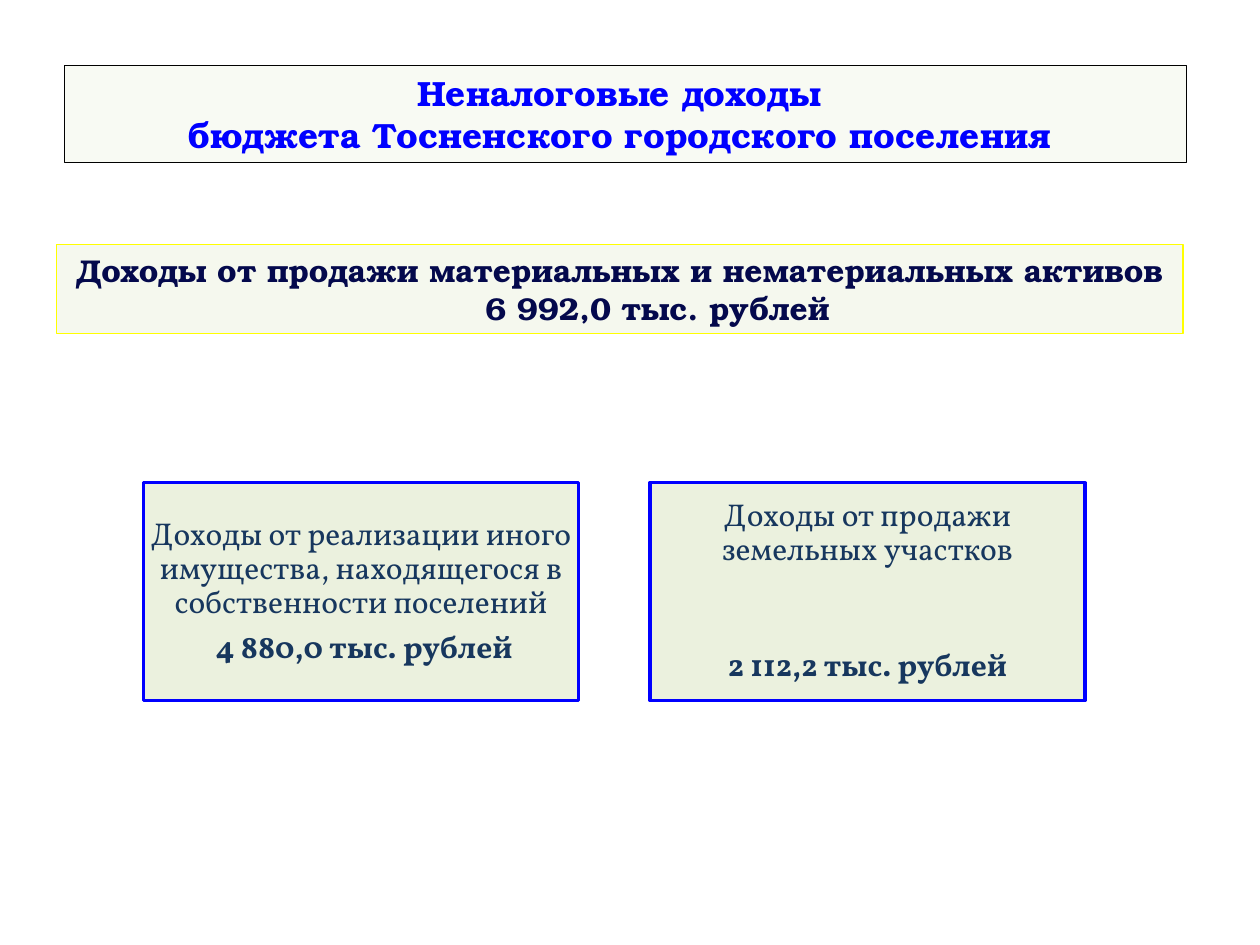
from lxml import etree
from pptx import Presentation
from pptx.dml.color import RGBColor
from pptx.enum.shapes import MSO_SHAPE
from pptx.enum.text import MSO_ANCHOR, PP_ALIGN
from pptx.oxml.ns import qn
from pptx.util import Inches, Pt

RECT = MSO_SHAPE.RECTANGLE
MIDDLE = MSO_ANCHOR.MIDDLE
CENTER = PP_ALIGN.CENTER

BLACK = RGBColor(0x00, 0x00, 0x00)
BLUE = RGBColor(0x00, 0x00, 0xFF)
YELLOW = RGBColor(0xFF, 0xFF, 0x00)
GREEN = RGBColor(0xEB, 0xF1, 0xDE)
NAVY = RGBColor(0x04, 0x09, 0x4C)
STEEL = RGBColor(0x17, 0x37, 0x5E)

HEAD = "TeX Gyre Bonum"
BODY = "Vollkorn"


class Deck:
    """Holds the style and the slide; places are percent of its size."""

    def __init__(self):
        self.prs = Presentation()
        self.prs.slide_width = Inches(10)
        self.prs.slide_height = Inches(7.5)
        self.slide = self.prs.slides.add_slide(self.prs.slide_layouts[6])

    def box(self, left, top, width, height, line, weight, alpha=100):
        wide, high = self.prs.slide_width / 100, self.prs.slide_height / 100
        shape = self.slide.shapes.add_shape(
            RECT, int(left * wide), int(top * high),
            int(width * wide), int(height * high))
        shape.shadow.inherit = False
        shape.fill.solid()
        shape.fill.fore_color.rgb = GREEN
        if alpha < 100:
            color = shape.fill._xPr.find(qn("a:solidFill"))[0]
            etree.SubElement(color, qn("a:alpha")).set("val", str(alpha * 1000))
        shape.line.color.rgb = line
        shape.line.width = Pt(weight)
        frame = shape.text_frame
        frame.word_wrap = True
        frame.vertical_anchor = MIDDLE
        return frame

    def text(self, frame, words, font, size, color, bold=True, indent=0):
        para = frame.paragraphs[0]
        if para.text:
            para = frame.add_paragraph()
        para.text = words
        para.alignment = CENTER
        if indent:
            para._p.get_or_add_pPr().set("marL", str(Inches(indent)))
        para.font.name = font
        para.font.size = Pt(size)
        para.font.bold = bold
        para.font.color.rgb = color
        return para

    def card(self, left, label, amount, gap=0, indent=0):
        frame = self.box(left, 51.07, 34.5, 23.07, BLUE, 2)
        frame.margin_left = frame.margin_right = Inches(0.01)
        frame.margin_top = frame.margin_bottom = Inches(0.01)
        name = self.text(frame, label, BODY, 18, STEEL, bold=False)
        total = self.text(frame, amount, BODY, 18, STEEL, indent=indent)
        for para in (name, total):
            para.line_spacing = 0.9
            para.space_after = Pt(6.3)
        if gap:
            total.space_before = Pt(gap)


def main():
    deck = Deck()

    # Title
    title = deck.box(5.1, 6.93, 89.1, 10.27, BLACK, 0.75, alpha=35)
    title.margin_right = Inches(0.2)
    deck.text(title, "Неналоговые доходы\vбюджета Тосненского городского поселения",
              HEAD, 20, BLUE)

    # Income cards
    deck.card(51.6, "Доходы от продажи земельных участков",
              "2 112,2 тыс. рублей", gap=40.5)
    deck.card(11.4, "Доходы от реализации иного имущества, "
              "находящегося в собственности поселений",
              "4 880,0 тыс. рублей", indent=0.05)

    # Total banner
    total = deck.box(4.5, 25.87, 89.4, 9.47, YELLOW, 0.75, alpha=49)
    deck.text(total, "Доходы от продажи материальных и нематериальных активов",
              HEAD, 18, NAVY)
    deck.text(total, "6 992,0 тыс. рублей", HEAD, 18, NAVY, indent=0.6)

    deck.prs.save("out.pptx")


if __name__ == "__main__":
    main()
